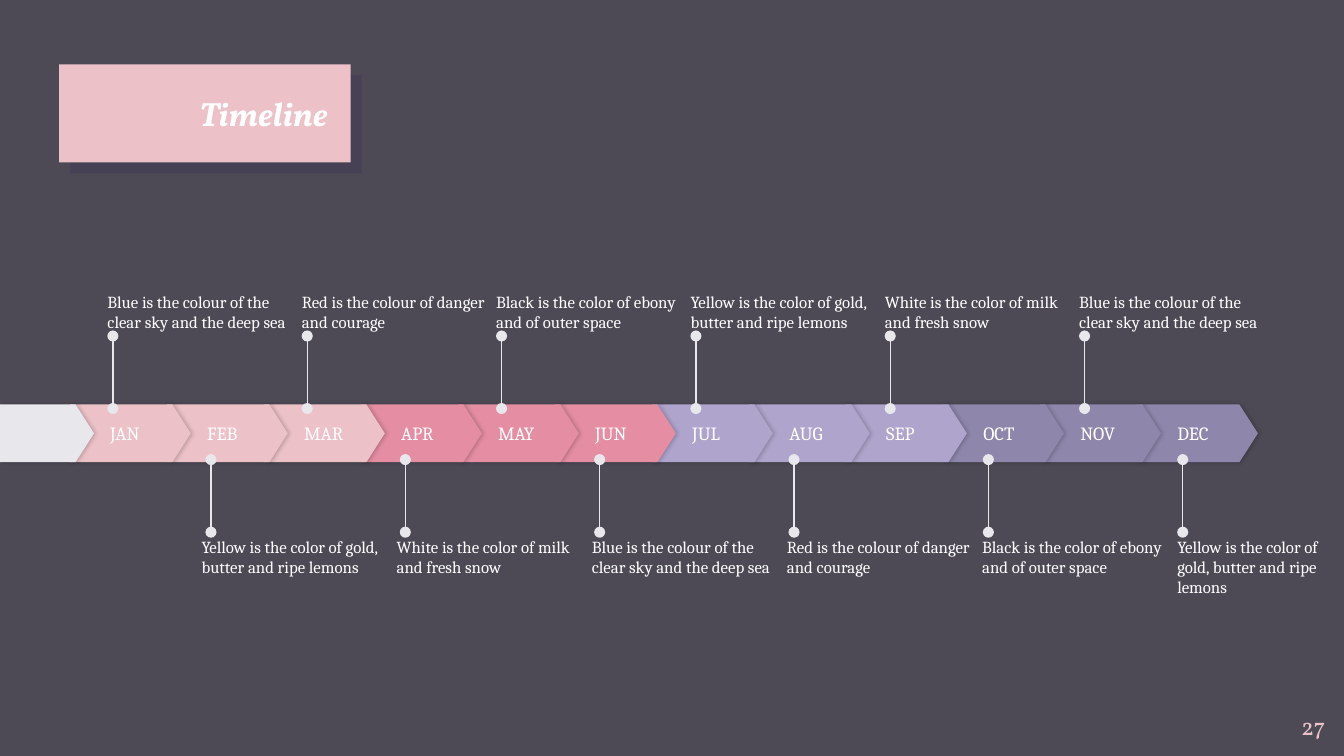
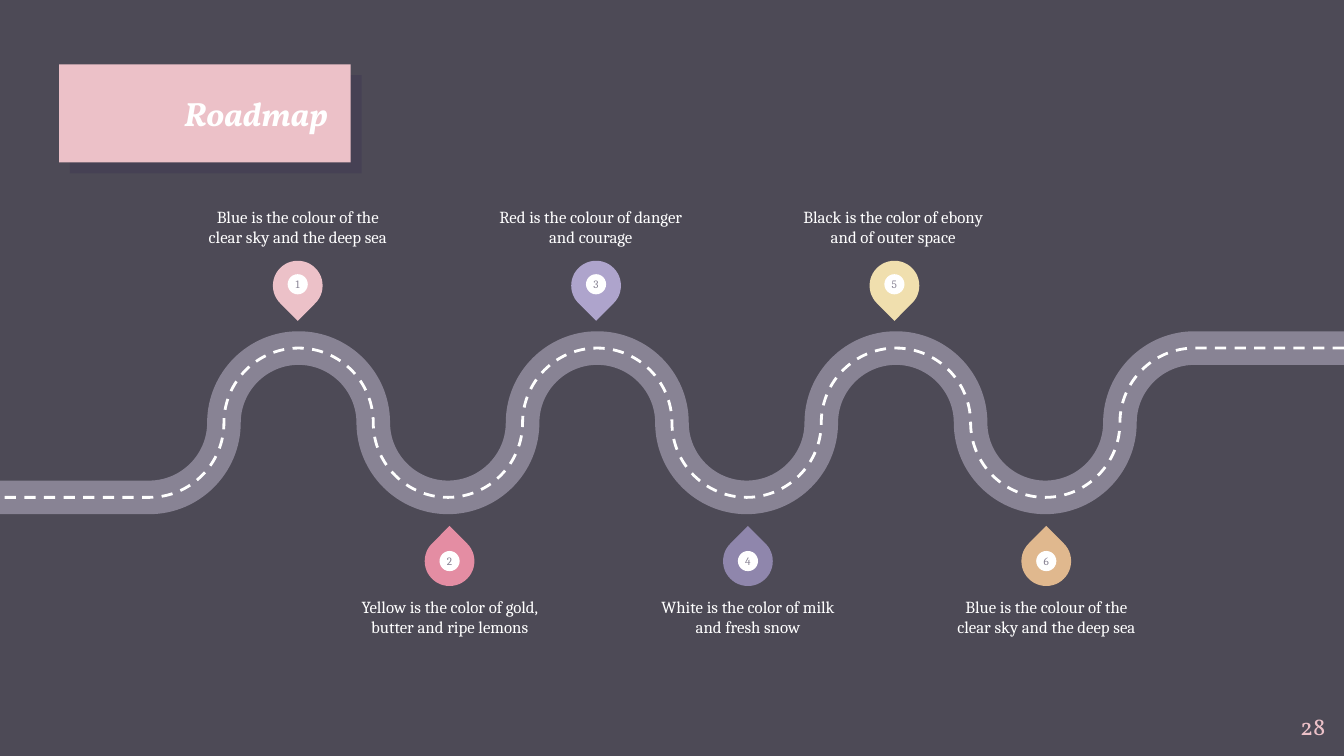
from dataclasses import dataclass

from lxml import etree
from pptx import Presentation
from pptx.dml.color import RGBColor
from pptx.enum.dml import MSO_LINE
from pptx.enum.shapes import MSO_CONNECTOR, MSO_SHAPE
from pptx.enum.text import MSO_ANCHOR, PP_ALIGN
from pptx.oxml.ns import qn
from pptx.util import Inches, Pt

LEFT, CENTER, RIGHT = PP_ALIGN.LEFT, PP_ALIGN.CENTER, PP_ALIGN.RIGHT
TOP, MIDDLE, BOTTOM = MSO_ANCHOR.TOP, MSO_ANCHOR.MIDDLE, MSO_ANCHOR.BOTTOM
RECT, OVAL = MSO_SHAPE.RECTANGLE, MSO_SHAPE.OVAL
PLATE, DROP = MSO_SHAPE.PENTAGON, MSO_SHAPE.TEAR
STRAIGHT, DASH = MSO_CONNECTOR.STRAIGHT, MSO_LINE.DASH

# Content
FACTS = [
    "Blue is the colour of the clear sky and the deep sea",
    "Yellow is the color of gold, butter and ripe lemons",
    "Red is the colour of danger and courage",
    "White is the color of milk and fresh snow",
    "Black is the color of ebony and of outer space",
]
QUARTERS = [
    ("pink", ["JAN", "FEB", "MAR"]),
    ("rose", ["APR", "MAY", "JUN"]),
    ("lilac", ["JUL", "AUG", "SEP"]),
    ("plum", ["OCT", "NOV", "DEC"]),
]
# Pin colour, sideways shift of its caption
STOPS = [("pink", 0), ("rose", 0), ("lilac", -0.04),
         ("plum", 0), ("cream", -0.01), ("sand", 0)]


@dataclass(frozen=True)
class Theme:
    back: str = "4D4A56"
    white: str = "FFFFFF"
    pale: str = "E7E7EC"
    pink: str = "ECC1C8"
    rose: str = "E48DA3"
    lilac: str = "AEA4CC"
    plum: str = "8F86AC"
    cream: str = "F0DFAE"
    sand: str = "E0B88E"
    road: str = "888394"
    navy: str = "20124D"
    black: str = "000000"
    head: str = "Vollkorn"
    body: str = "Cambria"
    title: float = 18
    page: float = 13
    month: float = 10
    fact: float = 9
    pin: float = 6


T = Theme()
W, H = 10, 10 * 9 / 16
COL = 7.94 / 11       # month step
PAIR = 7.23 / 5       # step between stems on one side
BEND = W / 18         # road bend radius
CREST = 2.59          # top of the road
ARC = 0.55            # handle length of a quarter circle
BAND = (0.44, 0.48, 2.17, 0.73)


def rgb(code):
    return RGBColor.from_string(code)


def box(*sizes):
    return [Inches(size) for size in sizes]


def write(shape, text, size, color=T.white, font=T.body, align=LEFT,
          anchor=TOP, pads=(0, 0, 0, 0), strong=False):
    frame = shape.text_frame
    frame.word_wrap = True
    frame.vertical_anchor = anchor
    (frame.margin_left, frame.margin_top,
     frame.margin_right, frame.margin_bottom) = box(*pads)
    para = frame.paragraphs[0]
    para.alignment = align
    run = para.add_run()
    run.text = text
    run.font.name, run.font.size = font, Pt(size)
    run.font.color.rgb = rgb(color)
    if strong:
        run.font.bold = run.font.italic = True


def label(slide, place, text, size, **style):
    write(slide.shapes.add_textbox(*box(*place)), text, size, **style)


def draw(shapes, kind, place, color):
    shape = shapes.add_shape(kind, *box(*place))
    shape.fill.solid()
    shape.fill.fore_color.rgb = rgb(color)
    shape.line.fill.background()
    shape.shadow.inherit = False
    return shape


def shade(shape, color, alpha, blur, dist, angle):
    """Give the shape an outer shadow: percent, points and degrees."""
    effect = shape.element.spPr.find(qn("a:effectLst"))
    outer = etree.SubElement(
        effect, qn("a:outerShdw"), blurRad=str(Pt(blur)), dist=str(Pt(dist)),
        dir=str(angle * 60000), algn="bl", rotWithShape="0")
    tint = etree.SubElement(outer, qn("a:srgbClr"), val=color)
    etree.SubElement(tint, qn("a:alpha"), val=str(alpha * 1000))


def start(deck, title, page):
    """Add a slide with its title and page number."""
    slide = deck.slides.add_slide(deck.slide_layouts[5])
    head = slide.shapes.title
    x, y, _, high = BAND
    head.left, head.top, head.width, head.height = box(x, y, 2, high)
    write(head, title, T.title, font=T.head, align=RIGHT,
          anchor=MIDDLE, strong=True)
    label(slide, (9.36, 5.19, 0.6, 0.43), str(page), T.page, color=T.pink,
          font=T.head, align=RIGHT, pads=(0.1,) * 4)
    return slide


def share(slide):
    """Put the title band on the slide's layout."""
    band = draw(slide.shapes, RECT, BAND, T.pink)
    shade(band, T.navy, 15, 0, 8.2, 45)
    band.element.nvSpPr.cNvPr.id = 100
    slide.slide_layout.shapes.element.insert(2, band.element)


def plate(slide, x, wide, color):
    shape = draw(slide.shapes, PLATE, (x, 3.01, wide, 0.43), color)
    shape.adjustments[0] = 0.32
    shade(shape, T.black, 20, 2.2, 0.8, 0)
    return shape


def stem(slide, x, low, high):
    link = slide.shapes.add_connector(STRAIGHT, *box(x, low, x, high))
    link.line.color.rgb = rgb(T.pale)
    link.line.width = Pt(0.75)
    props = link.element.spPr
    for end in ("a:headEnd", "a:tailEnd"):
        etree.SubElement(props.find(qn("a:ln")), qn(end), type="oval")
    etree.SubElement(props, qn("a:effectLst"))


def timeline(deck):
    slide = start(deck, "Timeline", 27)
    share(slide)
    months = [(name, getattr(T, hue)) for hue, names in QUARTERS
              for name in names]
    for i, (name, color) in reversed(list(enumerate(months))):
        shape = plate(slide, 0.52 + i * COL, 0.9, color)
        write(shape, name, T.month, anchor=MIDDLE, pads=(0.3, 0, 0, 0))
    plate(slide, 0, 0.7, T.pale)
    for below in (0, 1):
        for i in range(below, len(months), 2):
            pair = i // 2
            if below:
                mid, low, high, y, anchor = 1.57, 3.96, 3.42, 3.99, TOP
                x = 1.5 + pair * 7.26 / 5
            else:
                mid, low, high, y, anchor = 0.84, 3.04, 2.5, 1.89, BOTTOM
                x = 0.8 + pair * PAIR
            stem(slide, mid + pair * PAIR, low, high)
            label(slide, (x, y, min(1.37, 9.89 - x), 0.58),
                  FACTS[i % len(FACTS)], T.fact, anchor=anchor)


def route():
    """Return the road's nodes, right to left, counted in bends."""
    rows = (0, 1, 2, 1)
    bends = [(col, rows[col % 4]) for col in range(16, 1, -1)]
    return [(18, 0), *bends, (0, 2)]


def curve(line, a, b):
    """Turn the line from node a to node b into a quarter circle."""
    (ax, ay), (bx, by) = a, b
    dx, dy = (bx - ax) * ARC, (by - ay) * ARC
    if ax % 2 == 0:
        grips = (ax + dx, ay), (bx, by - dy)
    else:
        grips = (ax, ay + dy), (bx - dx, by)
    arc = etree.Element(qn("a:cubicBezTo"))
    for x, y in (*grips, b):
        etree.SubElement(arc, qn("a:pt"), x=str(Inches(x * BEND)),
                         y=str(Inches(y * BEND)))
    line.getparent().replace(line, arc)


def trace(slide, nodes, color, width, dash=None):
    spots = [box(x * BEND, CREST + y * BEND) for x, y in nodes]
    build = slide.shapes.build_freeform(*spots[0])
    build.add_line_segments(spots[1:], close=False)
    shape = build.convert_to_shape()
    lines = list(shape.element.iter(qn("a:lnTo")))
    for line, a, b in zip(lines, nodes, nodes[1:]):
        if a[1] != b[1]:
            curve(line, a, b)
    shape.fill.background()
    shape.line.color.rgb = rgb(color)
    shape.line.width = Pt(width)
    if dash:
        shape.line.dash_style = dash
    shape.shadow.inherit = False


def pin(slide, x, y, turn, drop, text, color):
    parts = slide.shapes.add_group_shape().shapes
    tear = draw(parts, DROP, (x, y, 0.37, 0.37), color)
    tear.rotation = turn
    disc = draw(parts, OVAL, (x + 0.11, y + drop, 0.15, 0.15), T.white)
    write(disc, text, T.pin, color=T.road, align=CENTER, anchor=MIDDLE)


def roadmap(deck):
    slide = start(deck, "Roadmap", 28)
    nodes = route()
    trace(slide, nodes, T.road, 18)
    trace(slide, nodes, T.white, 1.5, DASH)
    for i, (hue, shift) in enumerate(STOPS):
        pair, below = divmod(i, 2)
        if below:
            x, y, turn, drop, top, anchor = 3.16, 3.99, 315, 0.11, 4.44, TOP
        else:
            x, y, turn, drop, top, anchor = 2.03, 1.94, 135, 0.1, 1.26, BOTTOM
        x += pair * 2.22
        pin(slide, x, y, turn, drop, str(i + 1), getattr(T, hue))
        label(slide, (x - 0.52 + shift, top, 1.41, 0.58),
              FACTS[i % len(FACTS)], T.fact, align=CENTER, anchor=anchor)


def main():
    deck = Presentation()
    deck.slide_width, deck.slide_height = box(W, H)
    fill = deck.slide_master.background.fill
    fill.solid()
    fill.fore_color.rgb = rgb(T.back)
    timeline(deck)
    roadmap(deck)
    deck.save("out.pptx")


if __name__ == "__main__":
    main()
